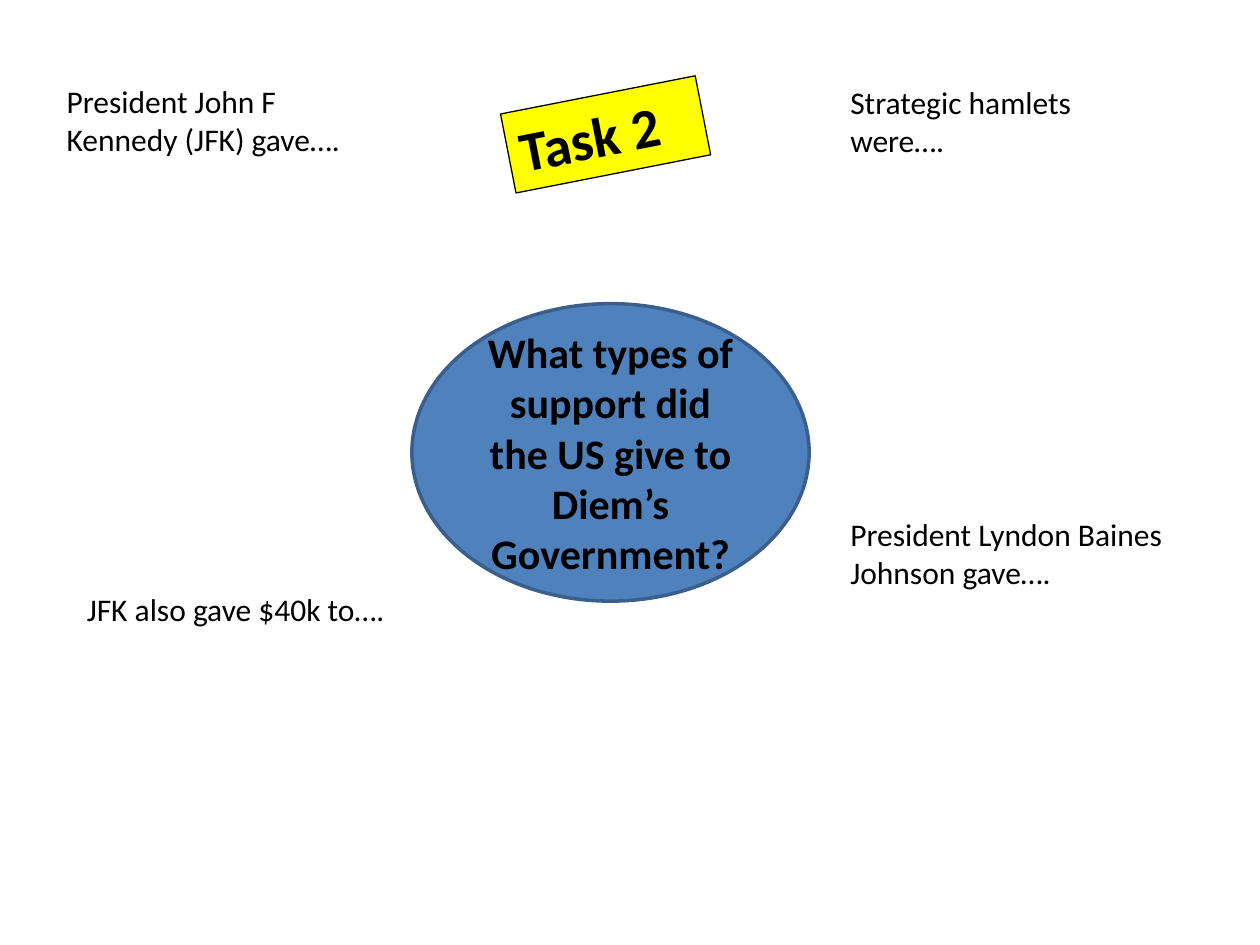
"""Build the Task 2 slide on US support for Diem's government."""
from pptx import Presentation
from pptx.dml.color import RGBColor
from pptx.enum.shapes import MSO_SHAPE
from pptx.enum.text import MSO_ANCHOR, PP_ALIGN
from pptx.util import Pt

OVAL, RECT = MSO_SHAPE.OVAL, MSO_SHAPE.RECTANGLE
TOP, MIDDLE = MSO_ANCHOR.TOP, MSO_ANCHOR.MIDDLE
LEFT, CENTER = PP_ALIGN.LEFT, PP_ALIGN.CENTER
BLACK = RGBColor(0, 0, 0)
BLUE = RGBColor(0x4F, 0x81, 0xBD)
NAVY = RGBColor(0x3A, 0x5F, 0x8C)
YELLOW = RGBColor(0xFF, 0xFF, 0)
FONT = "Calibri"
WIDTH = 193

QUESTION = "What types of support did the US give to Diem’s Government?"
TASK = "Task 2"
PROMPTS = [
    ("President John F Kennedy (JFK) gave….", 31, 43.2, 138),
    ("Strategic hamlets were….", 478.8, 43.9, 160),
    ("JFK also gave $40k to….", 42.5, 333.4, 117),
    ("President Lyndon Baines Johnson gave….", 478.8, 290.9, 160),
]


def write(shape, text, size, bold=False, align=LEFT, anchor=TOP):
    frame = shape.text_frame
    frame.word_wrap = True
    frame.vertical_anchor = anchor
    frame.text = text
    para = frame.paragraphs[0]
    para.alignment = align
    font = para.runs[0].font
    font.name, font.size, font.bold = FONT, Pt(size), bold
    font.color.rgb = BLACK


def draw(shapes, kind, box, fill, line, weight):
    shape = shapes.add_shape(kind, *map(Pt, box))
    shape.shadow.inherit = False
    shape.fill.solid()
    shape.fill.fore_color.rgb = fill
    shape.line.color.rgb = line
    shape.line.width = Pt(weight)
    return shape


def main():
    deck = Presentation()
    deck.slide_width, deck.slide_height = Pt(720), Pt(540)
    shapes = deck.slides.add_slide(deck.slide_layouts[6]).shapes

    oval = draw(shapes, OVAL, (235.4, 173.5, 227, 170), BLUE, NAVY, 2)
    write(oval, QUESTION, 24, True, CENTER, MIDDLE)

    for text, left, top, height in PROMPTS:
        box = shapes.add_textbox(Pt(left), Pt(top), Pt(WIDTH), Pt(height))
        write(box, text, 18)

    label = draw(shapes, RECT, (289.4, 53.8, 113.4, 46), YELLOW, BLACK, 0.75)
    label.rotation = 348.9
    write(label, TASK, 32, True)

    deck.save("out.pptx")


if __name__ == "__main__":
    main()
